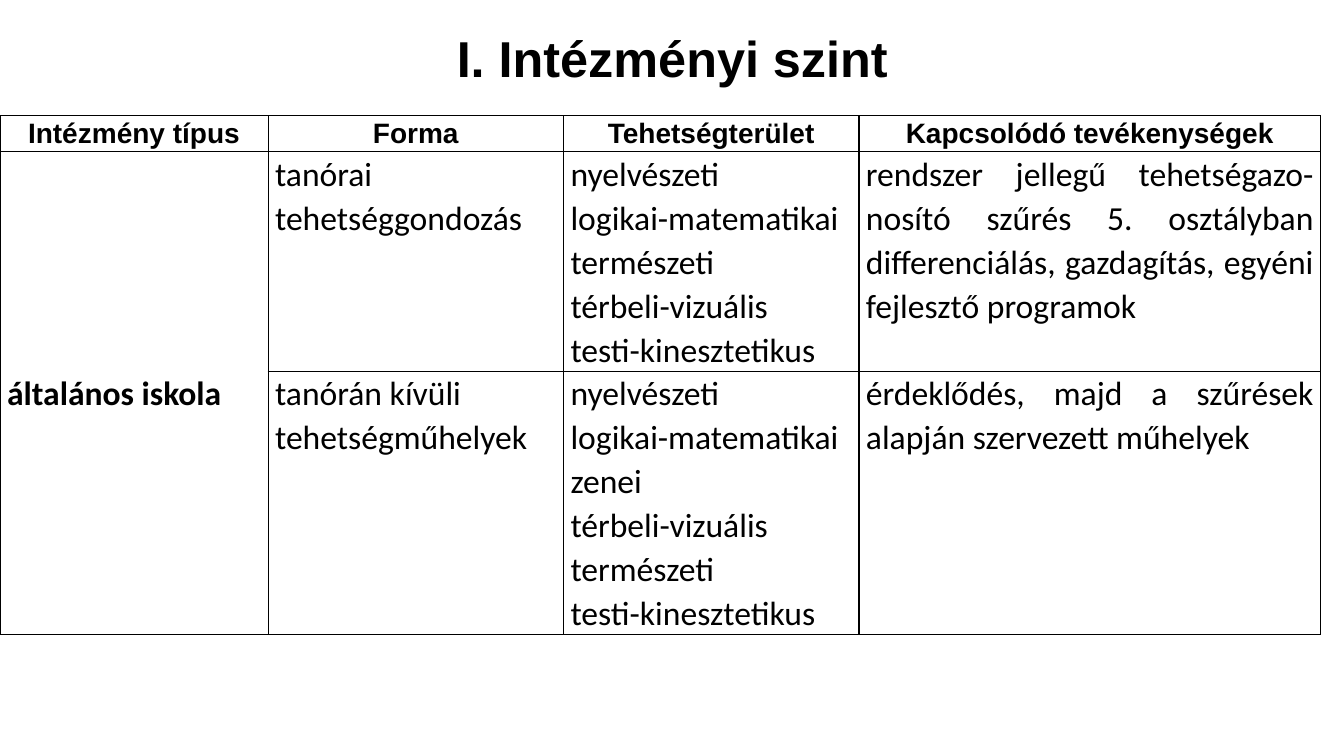
from lxml import etree
from pptx import Presentation
from pptx import util as u
from pptx.dml.color import RGBColor
from pptx.enum import text
from pptx.oxml import ns

CENTER, LEFT, JUSTIFY = (text.PP_ALIGN.CENTER, text.PP_ALIGN.LEFT,
                         text.PP_ALIGN.JUSTIFY)


def colour(value):
    return RGBColor.from_string(value)


class Slide:
    """Style and current slide; lengths are in hundredths of the slide."""
    INK = "000000"
    BORDER_WIDTH = u.Pt(1)
    CELL_INSET = u.Inches(0.07)

    def __init__(self, deck):
        self.width, self.height = deck.slide_width, deck.slide_height
        self.page = deck.slides.add_slide(deck.slide_layouts[6])

    def across(self, columns):
        return int(self.width * columns / 100)

    def down(self, rows):
        return int(self.height * rows / 100)

    def place(self, left, top, width, height):
        return (self.across(left), self.down(top),
                self.across(width), self.down(height))

    def add_lines(self, frame, lines, font, size, bold=False, align=LEFT, spacing=1.07):
        frame.word_wrap = True
        for index, line in enumerate(lines):
            para = frame.paragraphs[0] if index == 0 else frame.add_paragraph()
            para.alignment, para.line_spacing = align, spacing
            span = para.add_run()
            span.text = line
            span.font.name, span.font.size = font, u.Pt(size)
            span.font.bold = bold
            span.font.color.rgb = colour(self.INK)

    def title(self, line, area):
        box = self.page.shapes.add_textbox(*self.place(*area))
        box.text_frame.vertical_anchor = text.MSO_ANCHOR.MIDDLE
        self.add_lines(box.text_frame, [line], "Arial", 36, True, CENTER, 0.9)

    def table(self, left, top, widths, heights):
        area = self.place(left, top, sum(widths), sum(heights))
        grid = self.page.shapes.add_table(len(heights), len(widths), *area).table
        grid.first_row = grid.horz_banding = False
        for column, width in zip(grid.columns, widths):
            column.width = self.across(width)
        for row, height in zip(grid.rows, heights):
            row.height = self.down(height)
        for cell in grid.iter_cells():
            self.frame_cell(cell)
        return grid

    def frame_cell(self, cell):
        cell.margin_left = cell.margin_right = self.CELL_INSET
        cell.margin_top = cell.margin_bottom = 0
        properties = cell._tc.get_or_add_tcPr()
        for side in ("a:lnL", "a:lnR", "a:lnT", "a:lnB"):
            line = etree.SubElement(properties, ns.qn(side), w=str(self.BORDER_WIDTH))
            fill = etree.SubElement(line, ns.qn("a:solidFill"))
            etree.SubElement(fill, ns.qn("a:srgbClr"), val=self.INK)
        cell.fill.background()


HEADINGS = ["Intézmény típus", "Forma", "Tehetségterület", "Kapcsolódó tevékenységek"]
# Form, talent areas, related activities
PROGRAMMES = [
    ("tanórai tehetséggondozás",
     ["nyelvészeti", "logikai-matematikai", "természeti", "térbeli-vizuális",
      "testi-kinesztetikus"],
     "rendszer jellegű tehetségazo-nosító szűrés 5. osztályban "
     "differenciálás, gazdagítás, egyéni fejlesztő programok"),
    ("tanórán kívüli tehetségműhelyek",
     ["nyelvészeti", "logikai-matematikai", "zenei", "térbeli-vizuális",
      "természeti", "testi-kinesztetikus"],
     "érdeklődés, majd a szűrések alapján szervezett műhelyek"),
]


def main():
    deck = Presentation()
    deck.slide_width, deck.slide_height = u.Inches(13.33), u.Inches(7.5)
    slide = Slide(deck)

    # Title
    slide.title("I. Intézményi szint", (6.9, 0, 86.27, 16.27))

    # Table grid and headings
    grid = slide.table(0, 15.33, [19.95, 21.98, 21.98, 34.36], [4.53, 29, 34.8])
    for column, heading in enumerate(HEADINGS):
        slide.add_lines(grid.cell(0, column).text_frame, [heading], "Arial", 20, True, CENTER)

    # Institution type, spanning both programmes
    school = grid.cell(1, 0)
    school.merge(grid.cell(2, 0))
    school.vertical_anchor = text.MSO_ANCHOR.MIDDLE
    slide.add_lines(school.text_frame, ["általános iskola"], "Calibri", 24, True)

    # Programmes
    for row, (form, areas, activity) in enumerate(PROGRAMMES, start=1):
        entries = [([form], LEFT), (areas, JUSTIFY), ([activity], JUSTIFY)]
        for column, (lines, align) in enumerate(entries, start=1):
            slide.add_lines(grid.cell(row, column).text_frame, lines, "Calibri", 24, align=align)

    deck.save("out.pptx")


if __name__ == "__main__":
    main()
